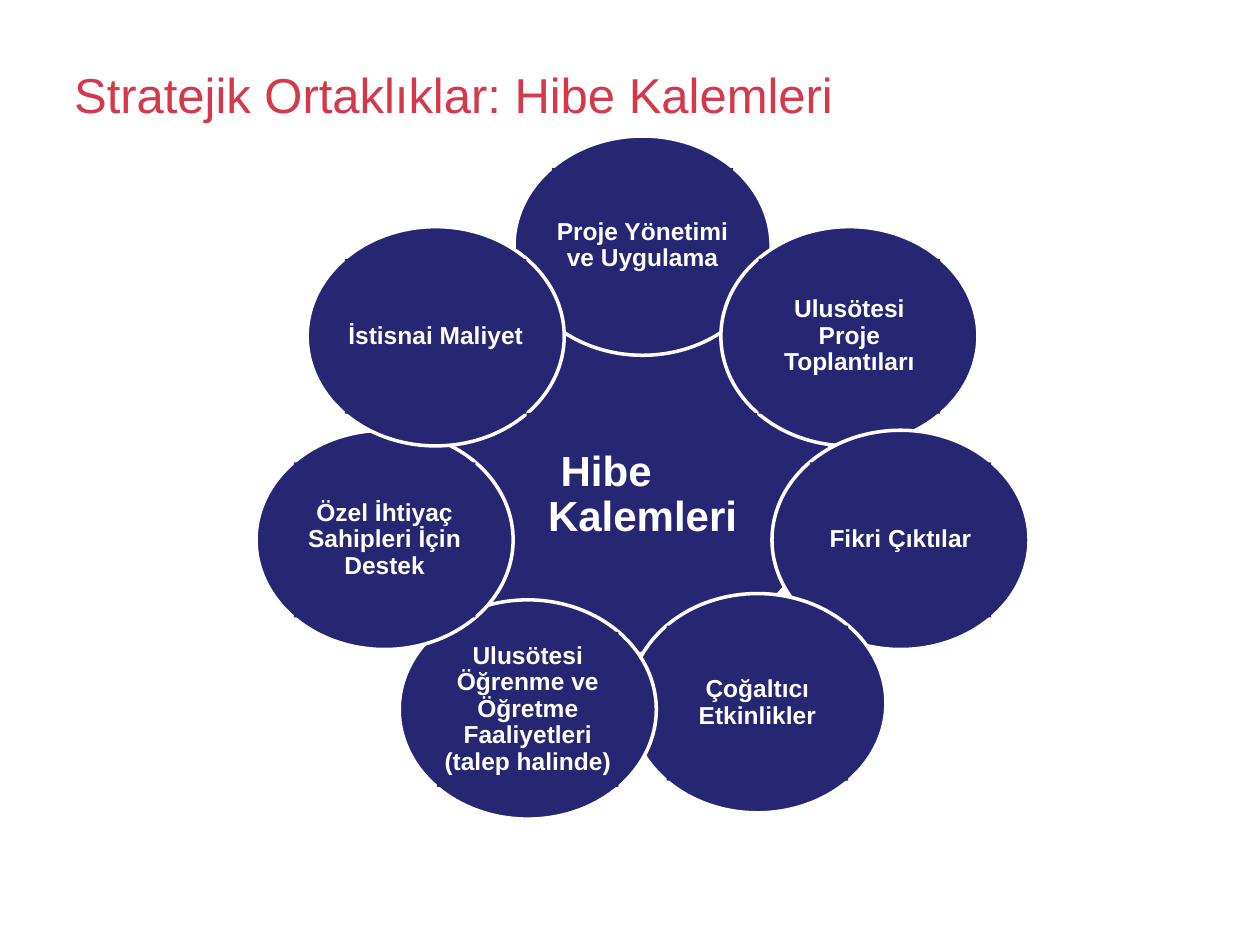
"""Build the slide of grant items arranged in a ring around a central hub."""
import math

import pptx
import pptx.dml.color
import pptx.enum.shapes
import pptx.enum.text
import pptx.util

TITLE = "Stratejik Ortaklıklar: Hibe Kalemleri"
HUB = "Hibe\vKalemleri"
ITEMS = [
    "Proje Yönetimi ve Uygulama",
    "Ulusötesi Proje Toplantıları",
    "Fikri Çıktılar",
    "Çoğaltıcı Etkinlikler",
    "Ulusötesi Öğrenme ve Öğretme Faaliyetleri (talep halinde)",
    "Özel İhtiyaç Sahipleri İçin Destek",
    "İstisnai Maliyet",
]
NUDGES = {4: 0.05}

THEME = {
    "font": "Arial",
    "title": "D5384B",
    "fill": "262673",
    "light": "FFFFFF",
    "title_size": 28,
    "hub_size": 24,
    "item_size": 14,
    "line_width": 2,
}

SLIDE_SIZE = (10, 7.5)
TITLE_BOX = (0.49, 0.41, 9.18, 0.67)
RING_CENTER = (5.1, 3.86)
RING_RADII = (2.1, 1.91)
PETAL_SIZE = (2.04, 1.74)
LABEL_SIZE = tuple(round(side * math.sqrt(0.5), 2) for side in PETAL_SIZE)
HUB_CENTER = (4.99, 3.725)
HUB_SIZE = (3.22, 2.93)
HUB_LABEL_CENTER = (5.095, 3.93)
HUB_LABEL_SIZE = (1.83, 1.3)
HUB_LEFT_MARGIN = 0.13
HUB_FIRST_LINE = 0.1

SHAPES = pptx.enum.shapes.MSO_SHAPE
ALIGN = pptx.enum.text.PP_ALIGN


def inches(values):
    return [pptx.util.Inches(value) for value in values]


def color(name):
    return pptx.dml.color.RGBColor.from_string(THEME[name])


def add_centered(slide, kind, center, size):
    corner = [middle - side / 2 for middle, side in zip(center, size)]
    shape = slide.shapes.add_shape(kind, *inches((*corner, *size)))
    shape.shadow.inherit = False
    shape.fill.solid()
    shape.fill.fore_color.rgb = color("fill")
    return shape


def add_ellipse(slide, center, size):
    ellipse = add_centered(slide, SHAPES.OVAL, center, size)
    ellipse.line.color.rgb = color("light")
    ellipse.line.width = pptx.util.Pt(THEME["line_width"])


def write(shape, text, size, color_name, alignment, bold=False):
    frame = shape.text_frame
    frame.word_wrap = True
    frame.vertical_anchor = pptx.enum.text.MSO_ANCHOR.MIDDLE
    frame.text = text
    paragraph = frame.paragraphs[0]
    paragraph.alignment = alignment
    for run in paragraph.runs:
        run.font.name = THEME["font"]
        run.font.size = pptx.util.Pt(THEME[size])
        run.font.bold = bold
        run.font.color.rgb = color(color_name)
    return paragraph


def add_label(slide, text, center, box_size, size, margin, alignment):
    label = add_centered(slide, SHAPES.RECTANGLE, center, box_size)
    label.line.fill.background()
    frame = label.text_frame
    frame.margin_left = frame.margin_right = pptx.util.Inches(margin)
    frame.margin_top = frame.margin_bottom = pptx.util.Inches(margin)
    paragraph = write(label, text, size, "light", alignment, bold=True)
    paragraph.line_spacing = 0.9
    return paragraph


def petal_center(index):
    angle = 2 * math.pi * index / len(ITEMS)
    return (
        RING_CENTER[0] + RING_RADII[0] * math.sin(angle),
        RING_CENTER[1] - RING_RADII[1] * math.cos(angle) + NUDGES.get(index, 0),
    )


def main():
    presentation = pptx.Presentation()
    presentation.slide_width, presentation.slide_height = inches(SLIDE_SIZE)
    slide = presentation.slides.add_slide(presentation.slide_layouts[6])

    title = slide.shapes.add_textbox(*inches(TITLE_BOX))
    write(title, TITLE, "title_size", "title", ALIGN.LEFT)

    add_ellipse(slide, HUB_CENTER, HUB_SIZE)
    for index, item in enumerate(ITEMS):
        center = petal_center(index)
        add_ellipse(slide, center, PETAL_SIZE)
        add_label(slide, item, center, LABEL_SIZE, "item_size", 0.02, ALIGN.CENTER)

    hub = add_label(slide, HUB, HUB_LABEL_CENTER, HUB_LABEL_SIZE,
                    "hub_size", 0.04, ALIGN.LEFT)
    properties = hub._p.get_or_add_pPr()
    properties.set("marL", str(pptx.util.Inches(HUB_LEFT_MARGIN)))
    properties.set("indent", str(pptx.util.Inches(HUB_FIRST_LINE)))

    presentation.save("out.pptx")


if __name__ == "__main__":
    main()
